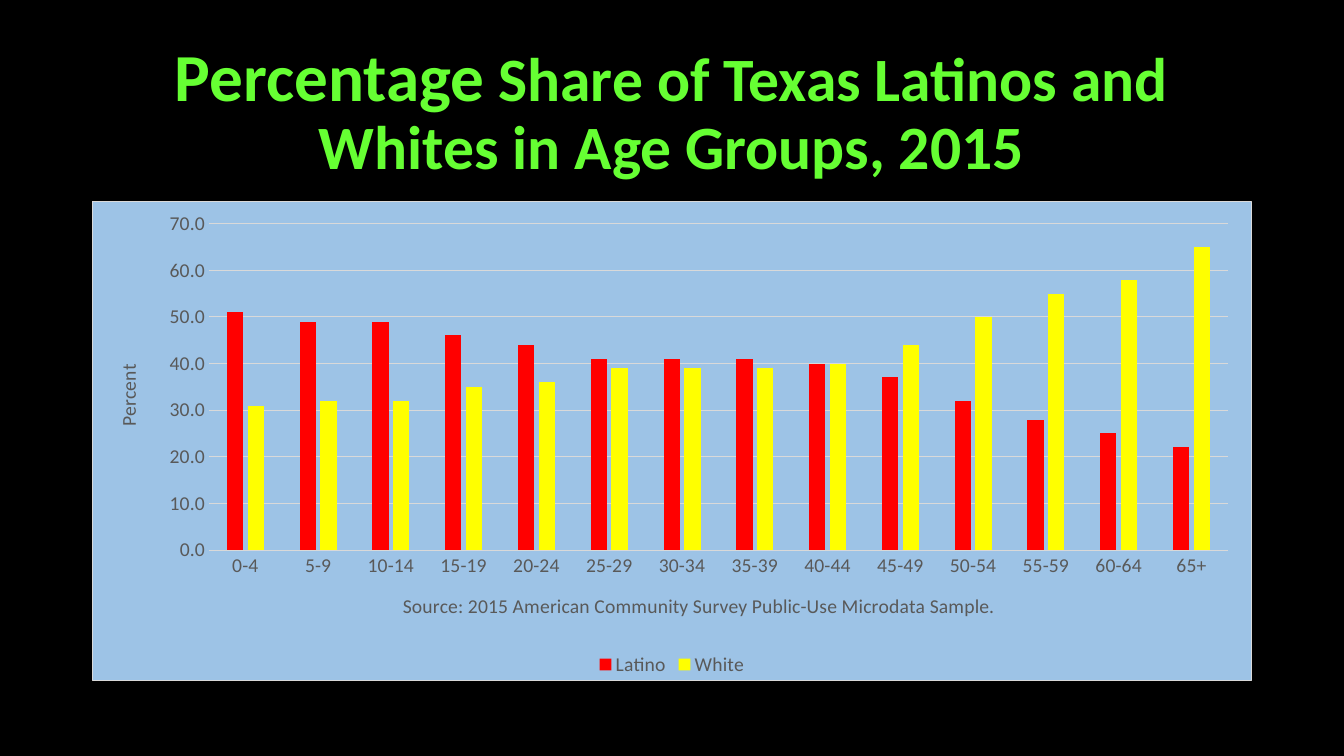
from pptx import Presentation
from pptx import util as u
from pptx.chart.data import CategoryChartData
from pptx.dml.color import RGBColor
from pptx.enum import chart as ch, text
from pptx.oxml import parse_xml
from pptx.oxml.ns import nsdecls

Pt = u.Pt
hues = {"black": "000000", "green": "66FF33", "sky": "9DC3E6", "gray": "595959",
        "rule": "D9D9D9", "red": "FF0000", "yellow": "FFFF00"}
rgb = {name: RGBColor.from_string(code) for name, code in hues.items()}
wide, high = 828, 343


def write(par, words, size=14, hue="gray", bold=False):
    run = par.add_run()
    run.text = words
    run.font.name = "Calibri"
    run.font.size = Pt(size)
    run.font.bold = bold
    run.font.color.rgb = rgb[hue]


def place(node, left, top, size=None):
    spots = {"x": left / wide, "y": top / high}
    if size:
        spots.update(w=size[0] / wide, h=size[1] / high)
    inner = '<c:layoutTarget val="inner"/>' if size else ""
    modes = "".join(f'<c:{k}Mode val="edge"/>' for k in "xy")
    sizes = "".join(f'<c:{k} val="{v}"/>' for k, v in spots.items())
    for old in node.findall("{*}layout"):
        node.remove(old)
    box = parse_xml(f'<c:layout {nsdecls("c")}><c:manualLayout>{inner}{modes}{sizes}'
                    '</c:manualLayout></c:layout>')
    node.insert(0 if size else 1, box)


deck = Presentation()
deck.slide_width, deck.slide_height = Pt(960), Pt(540)
slide = deck.slides.add_slide(deck.slide_layouts[6])
slide.background.fill.solid()
slide.background.fill.fore_color.rgb = rgb["black"]

title = slide.shapes.add_textbox(Pt(66), Pt(28.8), Pt(wide), Pt(104.4))
title.fill.solid()
title.fill.fore_color.rgb = rgb["black"]
title.line.color.rgb = rgb["black"]
title.line.width = Pt(1)
frame = title.text_frame
frame.word_wrap = True
frame.vertical_anchor = text.MSO_ANCHOR.MIDDLE
par = frame.paragraphs[0]
par.alignment = text.PP_ALIGN.CENTER
par.line_spacing = 0.9
write(par, "Percentage", 48, "green", True)
write(par, " Share of Texas Latinos and Whites in Age Groups, 2015", 44, "green", True)

data = CategoryChartData(number_format="0.0")
data.categories = [f"{age}-{age + 4}" for age in range(0, 65, 5)] + ["65+"]
data.add_series("Latino", [51, 49, 49, 46, 44, 41, 41, 41, 40, 37, 32, 28, 25, 22])
data.add_series("White", [31, 32, 32, 35, 36, 39, 39, 39, 40, 44, 50, 55, 58, 65])
chart = slide.shapes.add_chart(ch.XL_CHART_TYPE.COLUMN_CLUSTERED,
                               Pt(66), Pt(143.6), Pt(wide), Pt(high), data).chart
chart.has_title = False
chart.font.name = "Calibri"
chart.font.size = Pt(14)
chart.font.color.rgb = rgb["gray"]

plot = chart.plots[0]
plot.gap_width = 219
plot.overlap = -27
plot.vary_by_categories = False
for bars, hue in zip(plot.series, ("red", "yellow")):
    bars.format.fill.solid()
    bars.format.fill.fore_color.rgb = rgb[hue]
    bars.invert_if_negative = False

ages, share = chart.category_axis, chart.value_axis
labels = ((ages, "Source: 2015 American Community Survey Public-Use Microdata Sample.", 219, 277),
          (share, "Percent", 13, 114))
for axis, words, left, top in labels:
    axis.major_tick_mark = axis.minor_tick_mark = ch.XL_TICK_MARK.NONE
    write(axis.axis_title.text_frame.paragraphs[0], words)
    place(axis.axis_title._element, left, top)
share.axis_title.text_frame._txBody.bodyPr.set("rot", "-5400000")
share.axis_title.text_frame._txBody.bodyPr.set("vert", "horz")
share.minimum_scale, share.maximum_scale, share.major_unit = 0, 70, 10
share.tick_labels.number_format = "0.0"
share.tick_labels.number_format_is_linked = False
share.format.line.fill.background()
for line in (ages.format.line, share.major_gridlines.format.line):
    line.color.rgb = rgb["rule"]
    line.width = Pt(0.75)

chart.has_legend = True
chart.legend.position = ch.XL_LEGEND_POSITION.BOTTOM
chart.legend.include_in_layout = False
place(chart._chartSpace.chart.plotArea, 83, 15.8, (728.5, 233.8))

panel = parse_xml(
    f'<c:spPr {nsdecls("c", "a")}><a:solidFill><a:srgbClr val="{hues["sky"]}"/></a:solidFill>'
    f'<a:ln w="{Pt(0.75)}"><a:solidFill><a:srgbClr val="{hues["rule"]}"/></a:solidFill></a:ln></c:spPr>')
chart._chartSpace.chart.addnext(panel)

deck.save("out.pptx")
